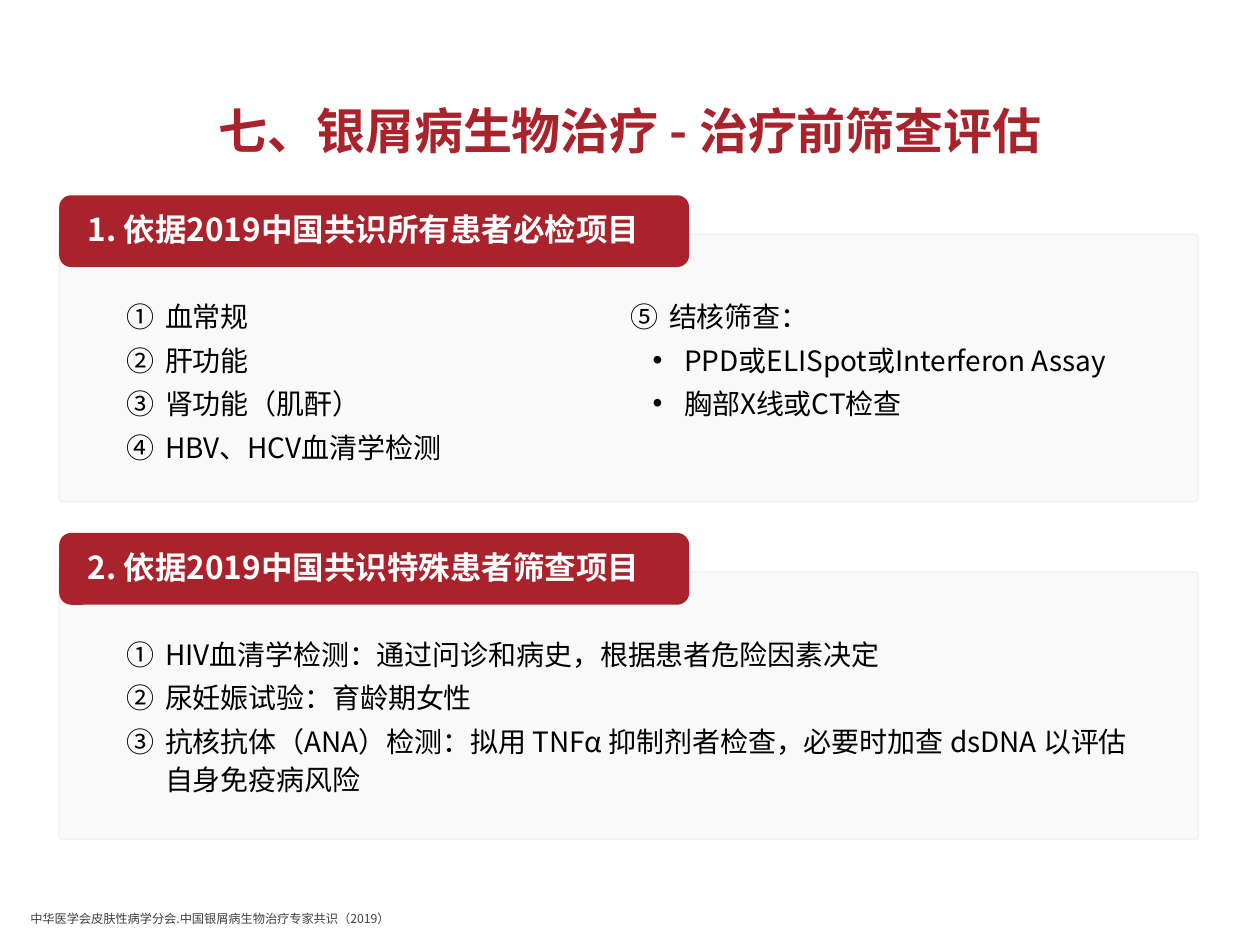
from dataclasses import dataclass
from typing import Optional

import lxml.etree
import pptx
import pptx.dml.color
import pptx.enum.shapes
import pptx.enum.text
import pptx.oxml.ns
import pptx.util
from pptx.util import Inches

FONT = "Noto Sans CJK SC"
COLORS = {
    "red": "A9232D",
    "white": "FFFFFF",
    "black": "000000",
    "grey": "404040",
    "card": "F9F9F9",
    "border": "F2F2F2",
}
ANCHOR = pptx.enum.text.MSO_ANCHOR


@dataclass(frozen=True)
class Item:
    text: str
    numbered: bool = True


@dataclass(frozen=True)
class Section:
    heading: str
    items: tuple[Item, ...]
    top: float
    placeholder: int
    columns: int = 1


SECTIONS = (
    Section("1. 依据2019中国共识所有患者必检项目", (
        Item("血常规"),
        Item("肝功能"),
        Item("肾功能（肌酐）"),
        Item("HBV、HCV血清学检测"),
        Item("结核筛查："),
        Item("PPD或ELISpot或Interferon Assay", numbered=False),
        Item("胸部X线或CT检查", numbered=False),
    ), top=1.55, placeholder=2, columns=2),
    Section("2. 依据2019中国共识特殊患者筛查项目", (
        Item("HIV血清学检测：通过问诊和病史，根据患者危险因素决定"),
        Item("尿妊娠试验：育龄期女性"),
        Item("抗核抗体（ANA）检测：拟用 TNFα 抑制剂者检查，必要时加查 dsDNA 以评估自身免疫病风险"),
    ), top=4.23, placeholder=4),
)


def rgb(name: str) -> pptx.dml.color.RGBColor:
    return pptx.dml.color.RGBColor.from_string(COLORS[name])


def place(shape, left: float, top: float, width: float, height: float) -> None:
    shape.left, shape.top = Inches(left), Inches(top)
    shape.width, shape.height = Inches(width), Inches(height)


def add_run(paragraph, text: str, size: float, color: str, bold: bool = False) -> None:
    run = paragraph.add_run()
    run.text = text
    run.font.size = pptx.util.Pt(size)
    run.font.bold = bold
    run.font.name = FONT
    run.font.color.rgb = rgb(color)
    east_asian = lxml.etree.SubElement(run.font._element, pptx.oxml.ns.qn("a:ea"))
    east_asian.set("typeface", FONT)


def set_frame(frame, anchor, margins: Optional[tuple[float, ...]] = None) -> None:
    frame.word_wrap = True
    frame.auto_size = pptx.enum.text.MSO_AUTO_SIZE.NONE
    frame.vertical_anchor = anchor
    if margins:
        (frame.margin_left, frame.margin_top,
         frame.margin_right, frame.margin_bottom) = map(Inches, margins)


def set_indent(paragraph, left: float, hanging: float):
    properties = paragraph._p.get_or_add_pPr()
    properties.set("marL", str(Inches(left)))
    properties.set("indent", str(-Inches(hanging)))
    return properties


def add_bullet(paragraph, numbered: bool) -> None:
    qn = pptx.oxml.ns.qn
    if numbered:
        properties = set_indent(paragraph, 0.31, 0.31)
        lxml.etree.SubElement(properties, qn("a:buFont"), typeface="+mj-lt")
        lxml.etree.SubElement(properties, qn("a:buAutoNum"), type="circleNumDbPlain")
    else:
        properties = set_indent(paragraph, 0.43, 0.25)
        lxml.etree.SubElement(properties, qn("a:buFont"), typeface="Arial")
        lxml.etree.SubElement(properties, qn("a:buChar"), char="•")


def add_panel(slide, top: float, width: float, height: float, fill: str):
    panel = slide.shapes.add_shape(
        pptx.enum.shapes.MSO_SHAPE.ROUNDED_RECTANGLE,
        Inches(0.47), Inches(top), Inches(width), Inches(height))
    panel.shadow.inherit = False
    panel.fill.solid()
    panel.fill.fore_color.rgb = rgb(fill)
    return panel


def fill_checklist(checklist, section: Section) -> None:
    place(checklist, 1, section.top + 0.79, 8, 1.41)
    frame = checklist.text_frame
    set_frame(frame, ANCHOR.TOP, (0, 0, 0, 0))
    body = frame._txBody.bodyPr
    body.set("numCol", str(section.columns))
    body.set("spcCol", "0")
    for index, item in enumerate(section.items):
        paragraph = frame.add_paragraph() if index else frame.paragraphs[0]
        add_bullet(paragraph, item.numbered)
        paragraph.line_spacing = 1.14
        paragraph.space_before = pptx.util.Pt(3 if index else 0)
        add_run(paragraph, item.text, 16, "black")


def add_section(slide, section: Section) -> None:
    card = add_panel(slide, section.top + 0.31, 9.04, 2.12, "card")
    card.adjustments[0] = 0.012
    card.line.color.rgb = rgb("border")
    card.line.width = pptx.util.Pt(1)

    checklist = slide.placeholders[section.placeholder]
    slide.shapes._spTree.append(checklist._element)
    fill_checklist(checklist, section)

    banner = add_panel(slide, section.top, 5, 0.57, "red")
    banner.line.fill.background()
    set_frame(banner.text_frame, ANCHOR.MIDDLE, (0.2, 0.05, 0.1, 0.05))
    heading = banner.text_frame.paragraphs[0]
    heading.alignment = pptx.enum.text.PP_ALIGN.LEFT
    heading.line_spacing = 0.9
    add_run(heading, section.heading, 18, "white", bold=True)


def add_title(slide, text: str) -> None:
    title = slide.shapes.title
    place(title, 0.69, 0.68, 8.62, 0.76)
    set_frame(title.text_frame, ANCHOR.MIDDLE)
    paragraph = title.text_frame.paragraphs[0]
    paragraph.alignment = pptx.enum.text.PP_ALIGN.CENTER
    paragraph.line_spacing = 0.9
    add_run(paragraph, text, 28, "red", bold=True)


def add_reference(slide, text: str) -> None:
    reference = slide.placeholders[1]
    place(reference, 0.14, 6.9, 9.38, 0.5)
    set_frame(reference.text_frame, ANCHOR.BOTTOM)
    paragraph = reference.text_frame.paragraphs[0]
    set_indent(paragraph, 0.25, 0.25)
    paragraph.space_before = pptx.util.Pt(0)
    add_run(paragraph, text, 7, "grey")


def main() -> None:
    deck = pptx.Presentation()
    deck.slide_width, deck.slide_height = Inches(10), Inches(7.5)
    slide = deck.slides.add_slide(deck.slide_layouts.get_by_name("Comparison"))
    unused = slide.placeholders[3]._element
    unused.getparent().remove(unused)

    add_title(slide, "七、银屑病生物治疗 - 治疗前筛查评估")
    add_reference(slide, "中华医学会皮肤性病学分会.中国银屑病生物治疗专家共识（2019）")
    for section in SECTIONS:
        add_section(slide, section)
    deck.save("out.pptx")


if __name__ == "__main__":
    main()
